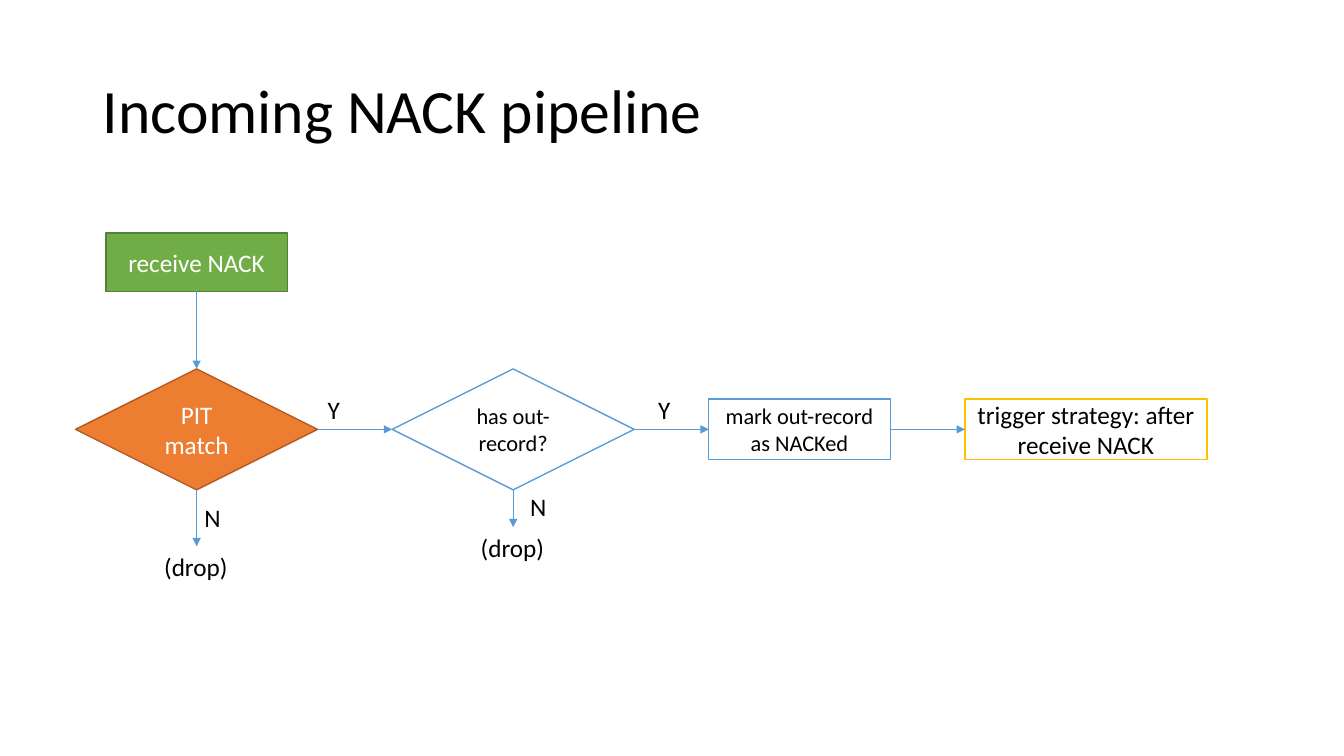
from lxml.etree import SubElement
from pptx import Presentation
from pptx.dml.color import RGBColor
from pptx.enum.shapes import MSO_CONNECTOR as Connector, MSO_SHAPE as Shape
from pptx.enum.text import MSO_ANCHOR as Anchor, MSO_AUTO_SIZE as AutoSize, PP_ALIGN as Align
from pptx.oxml.ns import qn
from pptx.util import Pt

EMU_PER_PX = 9144
BLUE, BLACK, WHITE = "5B9BD5", "000000", "FFFFFF"
DECISION = Shape.FLOWCHART_DECISION
START_WIDTH, START_HEIGHT = 180, 58
ROW_OFFSET, ROW_HEIGHT, GAP = 135, 120, 74
LABEL_HEIGHT, DROP_WIDTH = 40, 84

STEPS = [
    ("PIT match", DECISION, 240, 120, 18, "ED7D31", "AF5C24", WHITE),
    ("has out-record?", DECISION, 240, 120, 16, WHITE, BLUE, BLACK),
    ("mark out-record as NACKed", Shape.RECTANGLE, 180, 60, 16, WHITE, BLUE, BLACK),
    ("trigger strategy: after receive NACK", Shape.RECTANGLE, 240, 60, 18, WHITE, "FFC000", BLACK),
]
BRANCHES = {
    "PIT match": {"yes_shift": 0, "no_shift": (-2, 7), "drop_length": 56},
    "has out-record?": {"yes_shift": 14, "no_shift": (7, -3), "drop_length": 37},
}


def px(*lengths):
    return [length * EMU_PER_PX for length in lengths]


def color(value):
    return RGBColor.from_string(value)


def write(shape, text, size=18, ink=BLACK, align=Align.LEFT, anchor=Anchor.TOP, wrap=True, spacing=None):
    frame = shape.text_frame
    frame.word_wrap = wrap
    frame.vertical_anchor = anchor
    paragraph = frame.paragraphs[0]
    paragraph.alignment = align
    if spacing:
        paragraph.line_spacing = spacing
    run = paragraph.add_run()
    run.text = text
    run.font.name = "Calibri"
    run.font.size = Pt(size)
    run.font.color.rgb = color(ink)


def add_label(slide, text, left, top, width):
    label = slide.shapes.add_textbox(*px(left, top, width, LABEL_HEIGHT))
    write(label, text, wrap=False)
    label.text_frame.auto_size = AutoSize.SHAPE_TO_FIT_TEXT


def add_step(slide, box, text, kind, size, fill, outline, ink):
    shape = slide.shapes.add_shape(kind, *px(*box))
    shape.shadow.inherit = False
    shape.fill.solid()
    shape.fill.fore_color.rgb = color(fill)
    shape.line.color.rgb = color(outline)
    shape.line.width = Pt(1)
    write(shape, text, size=size, ink=ink, align=Align.CENTER, anchor=Anchor.MIDDLE)


def add_arrow(slide, start, end):
    arrow = slide.shapes.add_connector(Connector.STRAIGHT, *px(*start, *end))
    arrow.line.color.rgb = color(BLUE)
    arrow.line.width = Pt(0.5)
    SubElement(arrow.line._get_or_add_ln(), qn("a:tailEnd"), type="triangle")
    SubElement(arrow._element.spPr, qn("a:effectLst"))


def add_title(slide, box):
    title = slide.shapes.add_textbox(*px(*box))
    write(title, "Incoming NACK pipeline", size=44, anchor=Anchor.MIDDLE, spacing=0.9)


def add_branches(slide, box, yes_shift, no_shift, drop_length):
    left, top, width, height = box
    center, right, bottom = left + width // 2, left + width, top + height
    drop_top = bottom + drop_length
    add_arrow(slide, (center, bottom), (center, drop_top))
    add_label(slide, "N", center + no_shift[0], bottom + no_shift[1], 36)
    add_label(slide, "(drop)", center - DROP_WIDTH // 2, drop_top, DROP_WIDTH)
    add_label(slide, "Y", right + yes_shift, top + height // 2 - LABEL_HEIGHT, 32)


def add_pipeline(slide, left, top):
    row_top = top + ROW_OFFSET
    middle = row_top + ROW_HEIGHT // 2
    center = left + STEPS[0][2] // 2
    start_box = (center - START_WIDTH // 2, top, START_WIDTH, START_HEIGHT)
    add_step(slide, start_box, "receive NACK", Shape.RECTANGLE, 18, "70AD47", "538035", WHITE)
    add_arrow(slide, (center, top + START_HEIGHT), (center, row_top))

    for index, (text, kind, width, height, *style) in enumerate(STEPS):
        box = (left, middle - height // 2, width, height)
        add_step(slide, box, text, kind, *style)
        if index:
            add_arrow(slide, (left - GAP, middle), (left, middle))
        if text in BRANCHES:
            add_branches(slide, box, **BRANCHES[text])
        left += width + GAP


def main():
    presentation = Presentation()
    presentation.slide_width, presentation.slide_height = px(1333, 750)
    slide = presentation.slides.add_slide(presentation.slide_layouts[6])
    add_title(slide, (92, 40, 1150, 145))
    add_pipeline(slide, 75, 231)
    presentation.save("out.pptx")


if __name__ == "__main__":
    main()
